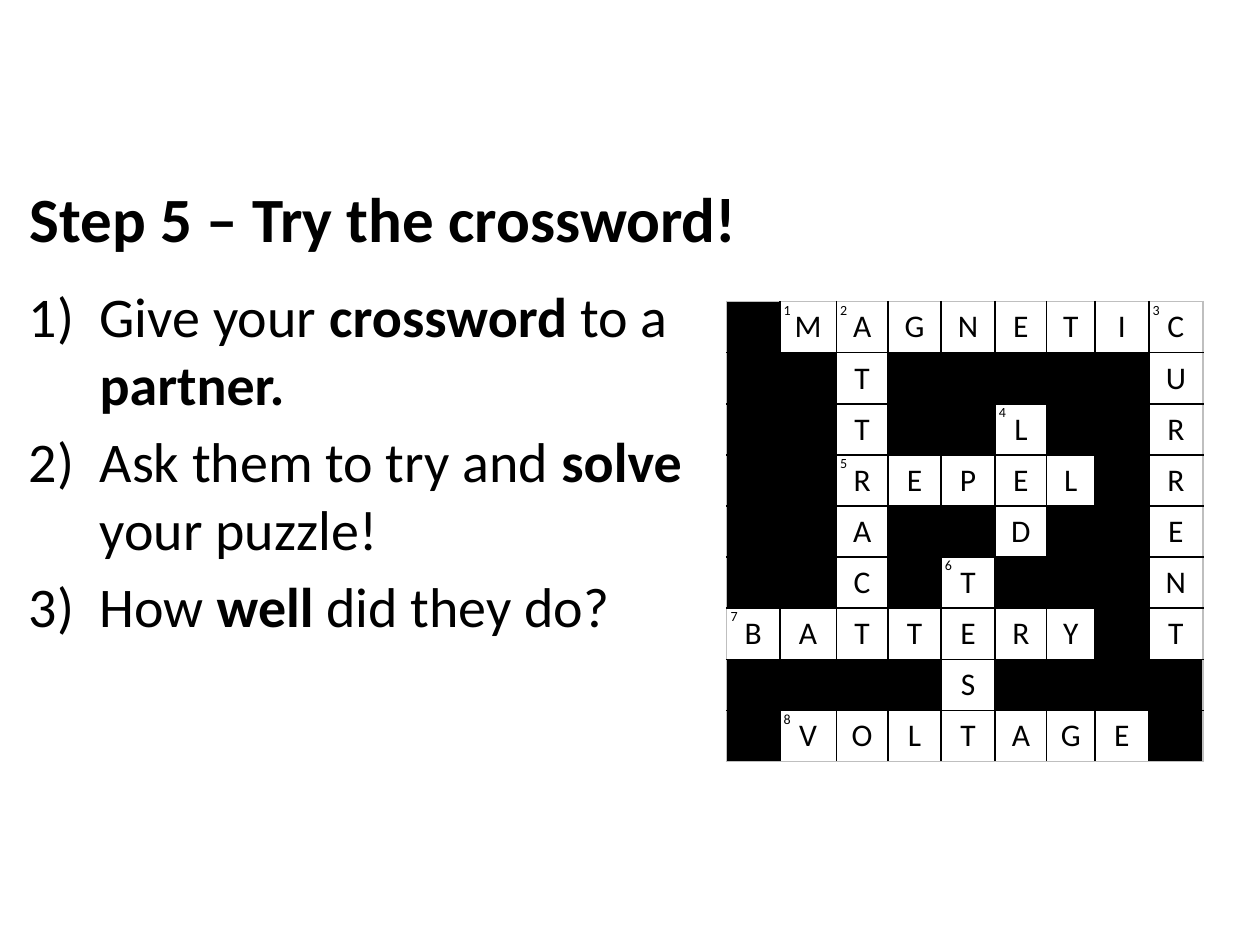
from lxml import etree
from pptx import Presentation
from pptx import util as u
from pptx.dml.color import RGBColor
from pptx.enum import text
from pptx.oxml.ns import qn

COLOURS = {"ink": "000000", "paper": "FFFFFF", "edge": "BFBFBF"}

TITLE = "Step 5 – Try the crossword!"
# Each step is a list of (words, bold)
STEPS = [
    [("Give your ", False), ("crossword", True), (" to a ", False), ("partner.", True)],
    [("Ask them to try and ", False), ("solve", True), (" your puzzle!", False)],
    [("How ", False), ("well", True), (" did they do?", False)],
]
# A dot is a blocked square
CROSSWORD = [
    ".MAGNETIC",
    "..T.....U",
    "..T..L..R",
    "..REPEL.R",
    "..A..D..E",
    "..C.T...N",
    "BATTERY.T",
    "....S....",
    ".VOLTAGE.",
]
# Clue number: (row, column)
CLUES = {1: (0, 1), 2: (0, 2), 3: (0, 8), 4: (2, 5),
         5: (3, 2), 6: (5, 4), 7: (6, 0), 8: (8, 1)}
GRID_LEFT, GRID_TOP, ROW_HEIGHT = 14.65, 6.08, 1.03
COLUMN_WIDTHS = [1.07, 1.14, 1.04, 1.07, 1.09, 1.04, 0.97, 1.09, 1.09]


class PageBuilder:
    font_name = "Calibri"

    def __init__(self, page):
        self.page = page

    def style(self, para, size, bold=None, align=text.PP_ALIGN.LEFT):
        para.alignment = align
        para.font.name = self.font_name
        para.font.size = u.Pt(size)
        para.font.bold = bold
        para.font.color.rgb = RGBColor.from_string(COLOURS["ink"])

    def textbox(self, left, top, width, height):
        box = self.page.shapes.add_textbox(u.Cm(left), u.Cm(top), u.Cm(width), u.Cm(height))
        box.text_frame.word_wrap = True
        return box.text_frame

    def title(self, words, left, top, width, height):
        box = self.page.shapes.title
        box.left, box.top = u.Cm(left), u.Cm(top)
        box.width, box.height = u.Cm(width), u.Cm(height)
        frame = box.text_frame
        frame.text = words
        frame.auto_size = text.MSO_AUTO_SIZE.NONE
        self.style(frame.paragraphs[0], 36, bold=True)

    def numbered_list(self, items, left, top, width, height):
        frame = self.textbox(left, top, width, height)
        for index, item in enumerate(items):
            para = frame.add_paragraph() if index else frame.paragraphs[0]
            para.space_after = u.Pt(6)
            props = para._p.get_or_add_pPr()
            props.set("marL", str(u.Cm(1.43)))
            props.set("indent", str(-u.Cm(1.43)))
            etree.SubElement(props, qn("a:buFont"), typeface="+mj-lt")
            etree.SubElement(props, qn("a:buAutoNum"), type="arabicParenR")
            self.style(para, 32)
            for words, bold in item:
                span = para.add_run()
                span.text = words
                span.font.bold = bold

    def border(self, cell, side, colour):
        line = etree.SubElement(cell._tc.get_or_add_tcPr(), qn("a:" + side), w=str(u.Pt(1)))
        fill = etree.SubElement(line, qn("a:solidFill"))
        etree.SubElement(fill, qn("a:srgbClr"), val=COLOURS[colour])

    def crossword(self, lines, left, top, widths, row_height):
        rows, columns = len(lines), len(widths)
        table = self.page.shapes.add_table(
            rows, columns, u.Cm(left), u.Cm(top),
            u.Cm(sum(widths)), u.Cm(rows * row_height)).table
        table.first_row = table.horz_banding = False
        for column, width in zip(table.columns, widths):
            column.width = u.Cm(width)
        for r, line in enumerate(lines):
            table.rows[r].height = u.Cm(row_height)
            for c, letter in enumerate(line):
                cell = table.cell(r, c)
                cell.margin_left = cell.margin_right = 0
                cell.margin_top = cell.margin_bottom = u.Cm(0.12)
                cell.vertical_anchor = text.MSO_ANCHOR.MIDDLE
                outer = {"lnL": c == 0, "lnR": c == columns - 1,
                         "lnT": r == 0, "lnB": r == rows - 1}
                for side, at_edge in outer.items():
                    self.border(cell, side, "edge" if at_edge else "ink")
                blocked = letter == "."
                cell.fill.solid()
                cell.fill.fore_color.rgb = RGBColor.from_string(
                    COLOURS["ink" if blocked else "paper"])
                if not blocked:
                    cell.text_frame.text = letter
                para = cell.text_frame.paragraphs[0]
                self.style(para, 18, align=text.PP_ALIGN.CENTER)

    def clue_number(self, number, left, top):
        frame = self.textbox(left, top, 0.5, 0.6)
        frame.text = str(number)
        self.style(frame.paragraphs[0], 8, align=text.PP_ALIGN.CENTER)


def main():
    deck = Presentation()
    deck.slide_width, deck.slide_height = u.Cm(25.4), u.Cm(19.05)
    builder = PageBuilder(deck.slides.add_slide(deck.slide_layouts[5]))

    # Heading and instructions
    builder.title(TITLE, 0.35, 3.48, 24.36, 1.8)
    builder.numbered_list(STEPS, 0.33, 5.56, 13.92, 9.1)

    # Solved crossword with clue numbers in the square corners
    builder.crossword(CROSSWORD, GRID_LEFT, GRID_TOP, COLUMN_WIDTHS, ROW_HEIGHT)
    for number, (row, column) in CLUES.items():
        builder.clue_number(number,
                            GRID_LEFT + sum(COLUMN_WIDTHS[:column]) - 0.1,
                            GRID_TOP + row * ROW_HEIGHT - 0.13)

    deck.save("out.pptx")


if __name__ == "__main__":
    main()
